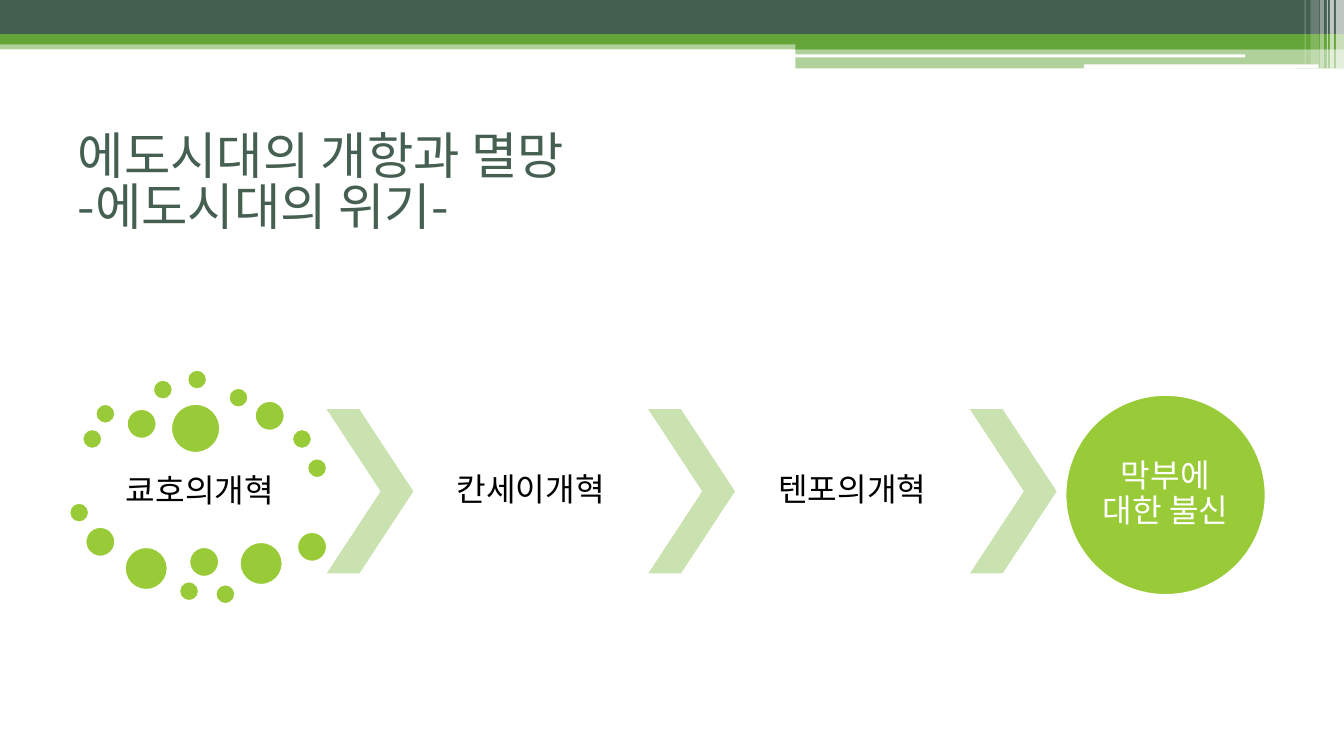
from lxml import etree
from pptx import Presentation
from pptx.dml.color import RGBColor
from pptx.enum.shapes import MSO_SHAPE as Shape
from pptx.enum.text import MSO_ANCHOR as Anchor, PP_ALIGN as Align
from pptx.oxml.ns import qn
from pptx.util import Inches, Pt

COLORS = {
    "dark": "455F51",
    "green": "63A537",
    "lime": "99CB38",
    "pale": "CAE2AF",
    "white": "FFFFFF",
    "black": "000000",
}
TITLE_FONT = "Noto Sans CJK KR"
LABEL_FONT = "Calibri"

# shape, left, top, width, height, colour, opacity in percent
BANNER = [
    (Shape.RECTANGLE, 0, 0.4, 13.33, 0.09, "green", 50),
    (Shape.RECTANGLE, 0, 0, 13.33, 0.34, "dark", 100),
    (Shape.RECTANGLE, 0, 0.34, 13.33, 0.1, "green", 100),
    (Shape.RECTANGLE, 7.89, 0.39, 5.44, 0.1, "green", 100),
    (Shape.RECTANGLE, 7.89, 0.48, 5.44, 0.2, "green", 50),
    (Shape.ROUNDED_RECTANGLE, 7.88, 0.54, 4.47, 0.03, "white", 100),
    (Shape.ROUNDED_RECTANGLE, 10.75, 0.64, 2.33, 0.04, "white", 100),
]
# left, width, height, opacity in percent
STRIPES = [
    (13.25, 0.08, 0.68, 65),
    (13.19, 0.04, 0.68, 65),
    (13.16, 0.01, 0.68, 60),
    (13.09, 0.04, 0.68, 40),
    (13, 0.08, 0.64, 20),
    (12.94, 0.01, 0.64, 30),
]
# diameter: left and top of each dot
DOTS = {
    0.19: [(0.82, 4.26), (0.95, 4.01), (1.52, 3.77), (1.86, 3.67), (2.27, 3.85),
           (2.9, 4.26), (3.05, 4.55), (0.69, 4.99), (1.78, 5.77), (2.14, 5.8)],
    0.29: [(1.26, 4.06), (2.53, 3.98), (0.85, 5.23), (1.88, 5.43), (2.95, 5.28)],
    0.42: [(1.24, 5.43), (2.38, 5.38)],
    0.48: [(1.7, 4.01)],
}
STEP_TOP, STEP_HEIGHT = 4.06, 1.63
CHEVRON_LEFT, CHEVRON_WIDTH, LABEL_WIDTH = 3.24, 0.86, 2.33
STEP_PITCH = 3.19


def add_filled(slide, kind, left, top, width, height, color, opacity=100):
    shape = slide.shapes.add_shape(
        kind, Inches(left), Inches(top), Inches(width), Inches(height))
    shape.shadow.inherit = False
    shape.line.fill.background()
    shape.fill.solid()
    shape.fill.fore_color.rgb = RGBColor.from_string(COLORS[color])
    if opacity < 100:
        fill_color = shape.fill._xPr.find(qn("a:solidFill"))[0]
        etree.SubElement(fill_color, qn("a:alpha"), val=str(opacity * 1000))
    return shape


def add_circle(slide, left, top, diameter):
    circle = add_filled(slide, Shape.OVAL, left, top, diameter, diameter, "lime")
    circle.line.color.rgb = RGBColor.from_string(COLORS["white"])
    circle.line.width = Pt(1)


def add_chevron(slide, left):
    chevron = add_filled(slide, Shape.CHEVRON, left, STEP_TOP,
                         CHEVRON_WIDTH, STEP_HEIGHT, "pale")
    chevron.adjustments[0] = 0.623


def format_paragraph(paragraph, font_name, size, color, align, spacing):
    paragraph.alignment = align
    paragraph.line_spacing = spacing
    paragraph.font.name = font_name
    paragraph.font.size = Pt(size)
    paragraph.font.color.rgb = RGBColor.from_string(COLORS[color])


def add_label(slide, text, left, top, width, height, color="black", inset=0.03):
    box = slide.shapes.add_textbox(
        Inches(left), Inches(top), Inches(width), Inches(height))
    frame = box.text_frame
    frame.word_wrap = True
    frame.vertical_anchor = Anchor.MIDDLE
    frame.margin_left = frame.margin_right = Inches(inset)
    frame.margin_top = frame.margin_bottom = Inches(inset)
    frame.text = text
    format_paragraph(frame.paragraphs[0], LABEL_FONT, 23, color, Align.CENTER, 0.9)


def add_title(slide, text):
    title = slide.shapes.title
    title.left, title.top = Inches(0.67), Inches(1.25)
    title.width, title.height = Inches(12), Inches(1.17)
    frame = title.text_frame
    frame.vertical_anchor = Anchor.MIDDLE
    frame.text = text
    format_paragraph(frame.paragraphs[0], TITLE_FONT, 36, "dark", Align.LEFT, 0.84)


def add_banner(slide):
    for part in BANNER:
        add_filled(slide, *part)
    for left, width, height, opacity in STRIPES:
        add_filled(slide, Shape.RECTANGLE, left, 0, width, height, "white", opacity)


def add_reforms(slide):
    add_label(slide, "쿄호의개혁", 0.82, 4.5, LABEL_WIDTH, 0.77)
    for diameter, corners in DOTS.items():
        for left, top in corners:
            add_circle(slide, left, top, diameter)
    for step, reform in enumerate(["칸세이개혁", "텐포의개혁", None]):
        left = CHEVRON_LEFT + step * STEP_PITCH
        add_chevron(slide, left)
        if reform:
            add_label(slide, reform, left + CHEVRON_WIDTH, STEP_TOP,
                      LABEL_WIDTH, STEP_HEIGHT)


def add_outcome(slide):
    add_circle(slide, 10.57, 3.92, 1.98)
    add_label(slide, "막부에 대한 불신", 10.86, 4.21, 1.4, 1.4, "white", inset=0)


def main():
    presentation = Presentation()
    presentation.slide_width = Inches(13.33)
    presentation.slide_height = Inches(7.5)
    slide = presentation.slides.add_slide(presentation.slide_layouts[5])
    add_banner(slide)
    add_title(slide, "에도시대의 개항과 멸망\v-에도시대의 위기-")
    add_reforms(slide)
    add_outcome(slide)
    presentation.save("out.pptx")


if __name__ == "__main__":
    main()
